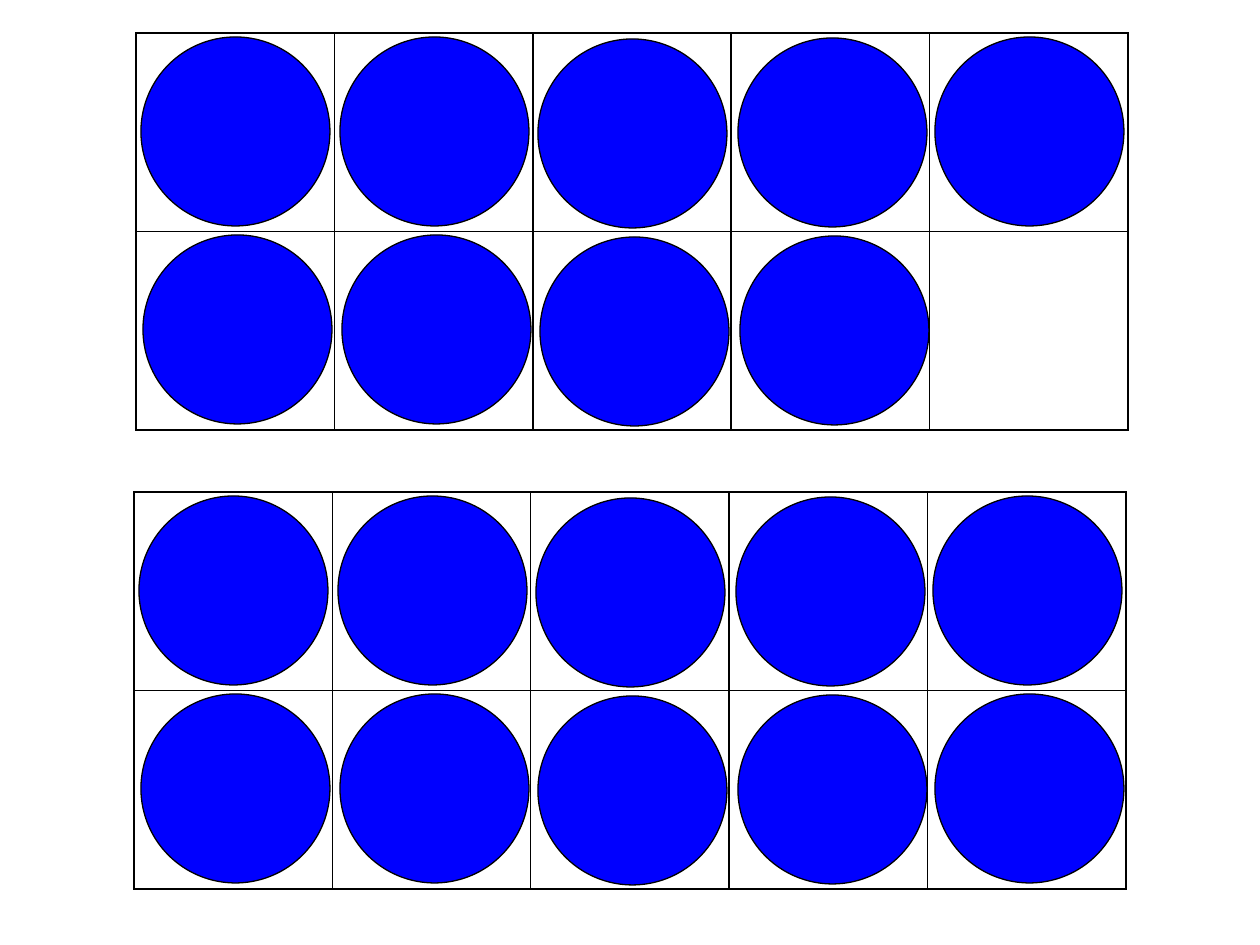
from lxml.etree import SubElement
from pptx import Presentation
from pptx.dml.color import RGBColor
from pptx.enum.shapes import MSO_SHAPE as Preset
from pptx.oxml.ns import qn
from pptx.util import Inches, Pt

PX = Inches(1) / 126
BLACK, BLUE = "000000", "0000FF"
COLUMNS, ROWS = 5, 2
FRAME_WIDTH, FRAME_HEIGHT = 992, 397
COUNTER_SIZE = 189
COUNTER_OFFSETS = [(5, 4), (204, 4), (402, 6), (602, 5), (799, 4)]
ROW_SHIFT = (2, 198)
TEN_FRAMES = [(136, 33, 9), (134, 492, 10)]
TABLE_FORMAT = {"first_row": False, "horz_banding": False}


def emu(*lengths):
    return [round(length * PX) for length in lengths]


def color(hex_string):
    return RGBColor.from_string(hex_string)


prs = Presentation()
prs.slide_width, prs.slide_height = emu(1260, 945)
slide = prs.slides.add_slide(prs.slide_layouts[6])

for left, top, count in TEN_FRAMES:
    frame = slide.shapes.add_table(
        ROWS, COLUMNS, *emu(left, top, FRAME_WIDTH, FRAME_HEIGHT)
    ).table
    for attribute, value in TABLE_FORMAT.items():
        setattr(frame, attribute, value)
    for cell in frame.iter_cells():
        properties = cell._tc.get_or_add_tcPr()
        for side in ("a:lnL", "a:lnR", "a:lnT", "a:lnB"):
            border = SubElement(properties, qn(side), w=str(Pt(1)))
            border_fill = SubElement(border, qn("a:solidFill"))
            SubElement(border_fill, qn("a:srgbClr"), val=BLACK)
        cell.fill.background()

    for position in range(count):
        row, column = divmod(position, COLUMNS)
        offset_x, offset_y = COUNTER_OFFSETS[column]
        x = left + offset_x + row * ROW_SHIFT[0]
        y = top + offset_y + row * ROW_SHIFT[1]
        counter = slide.shapes.add_shape(
            Preset.OVAL, *emu(x, y, COUNTER_SIZE, COUNTER_SIZE)
        )
        counter.shadow.inherit = False
        counter.fill.solid()
        counter.fill.fore_color.rgb = color(BLUE)
        counter.line.color.rgb = color(BLACK)
        counter.line.width = Pt(0.75)

prs.save("out.pptx")
